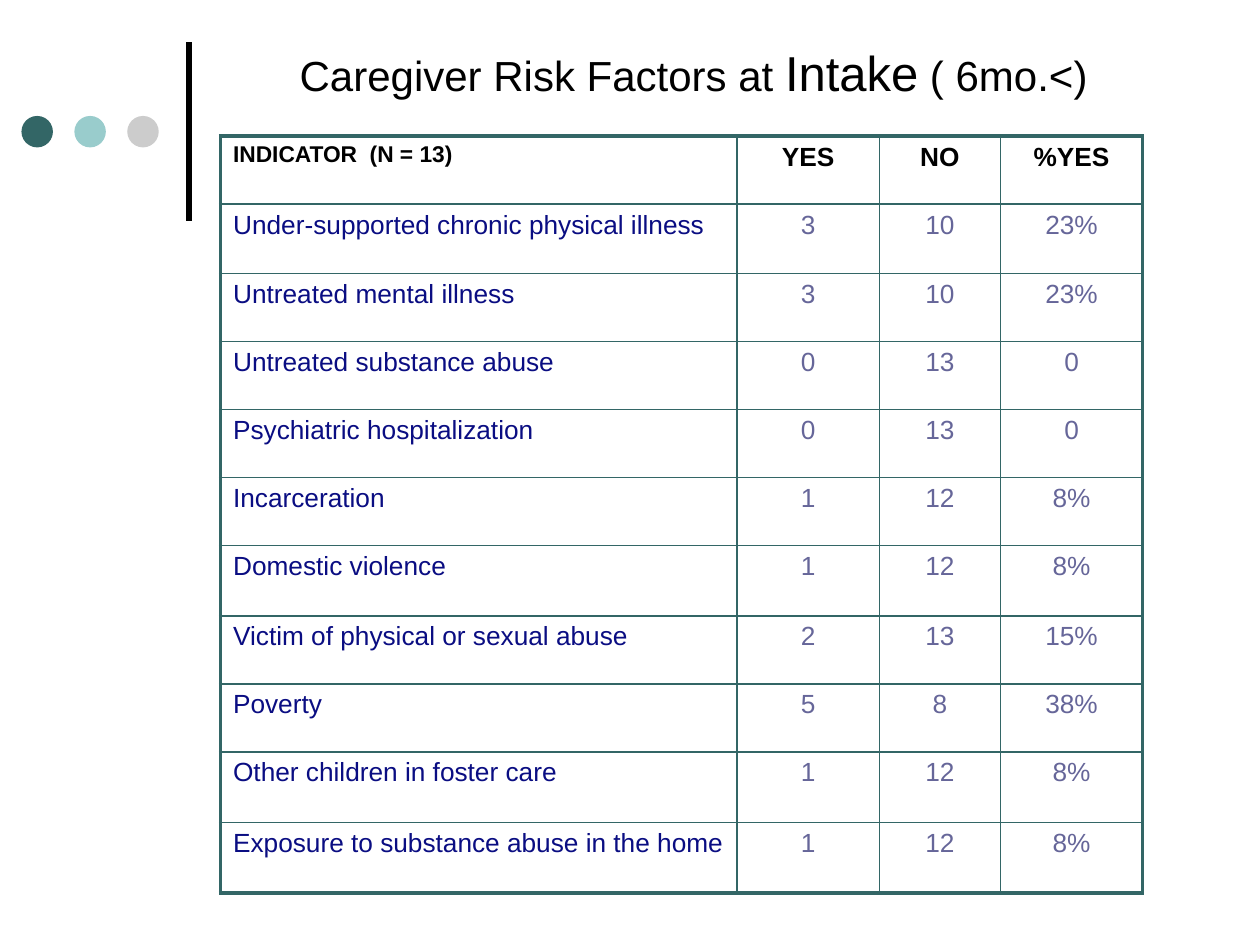
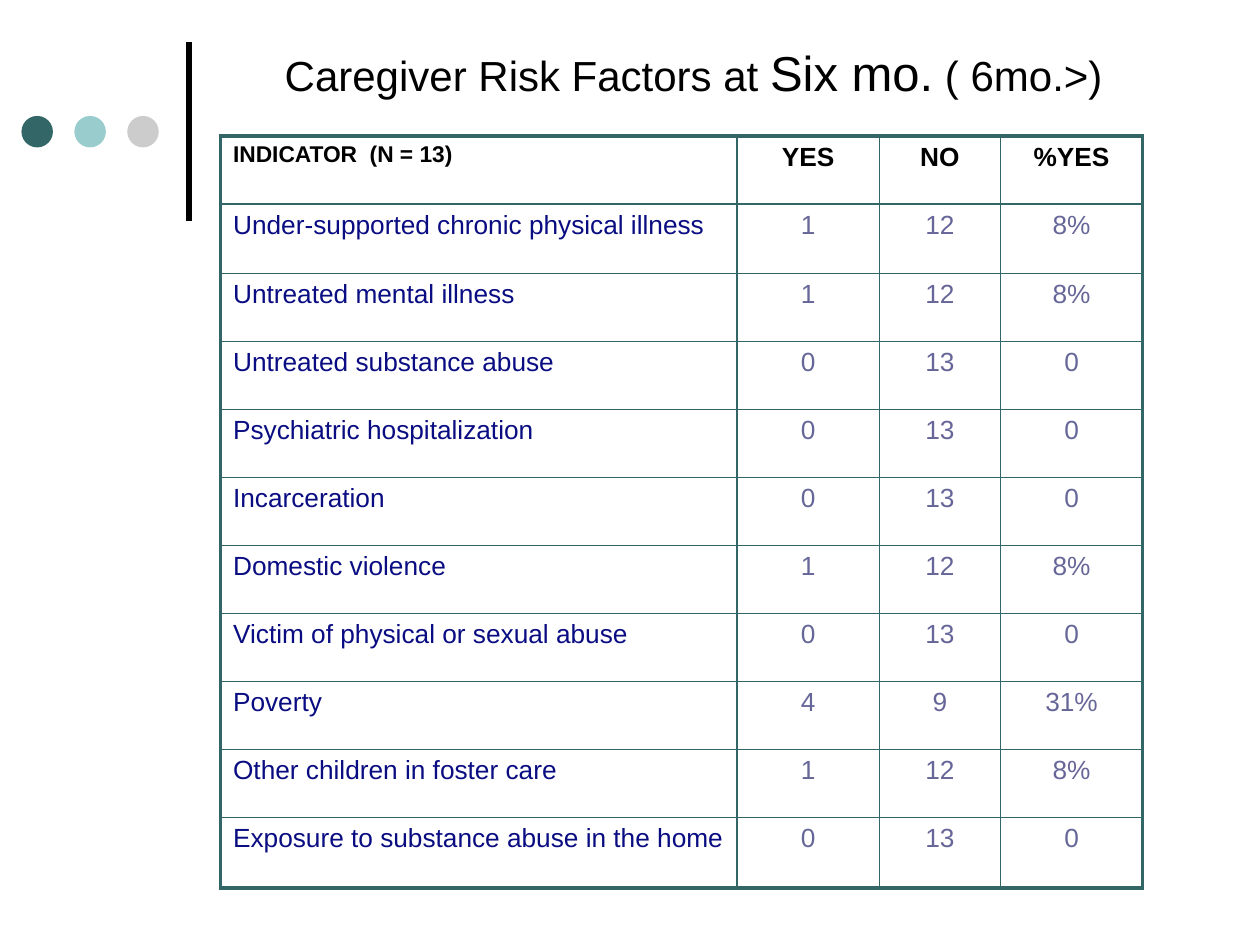
from dataclasses import dataclass

from lxml import etree
from pptx import Presentation
from pptx.dml.color import RGBColor
from pptx.enum.shapes import MSO_CONNECTOR, MSO_SHAPE
from pptx.enum.text import MSO_ANCHOR, PP_ALIGN
from pptx.oxml.ns import qn
from pptx.util import Inches, Pt

LINE, OVAL = MSO_CONNECTOR.STRAIGHT, MSO_SHAPE.OVAL
LEFT, CENTER = PP_ALIGN.LEFT, PP_ALIGN.CENTER
MIDDLE = MSO_ANCHOR.MIDDLE


@dataclass(frozen=True)
class Theme:
    font: str = "Arial"
    black: str = "000000"
    teal: str = "336666"
    aqua: str = "99CCCC"
    grey: str = "CCCCCC"
    navy: str = "0A0D82"
    violet: str = "666699"
    title: float = 24
    title_accent: float = 28
    label_head: float = 13
    body: float = 15
    rule: float = 3
    outer: float = 2.25
    inner: float = 1


T = Theme()

# Boxes: left, top, width, height
MARK_BOX = (0.17, 0.33, 1.33, 1.42)
TITLE_BOX = (1.67, 0.21, 7.67, 0.73)
TABLE_AT = (1.75, 1.08)
COL_WIDTHS = (4.1, 1.13, 0.96, 1.13)
ROW_HEIGHT = 0.54

HEADER = ("INDICATOR  (N = 13)", "YES", "NO", "%YES")
INDICATORS = (
    "Under-supported chronic physical illness",
    "Untreated mental illness",
    "Untreated substance abuse",
    "Psychiatric hospitalization",
    "Incarceration",
    "Domestic violence",
    "Victim of physical or sexual abuse",
    "Poverty",
    "Other children in foster care",
    "Exposure to substance abuse in the home",
)

# Title accent, title ending, (yes, no, %yes) by indicator, taller rows
SLIDES = (
    ("Intake", " ( 6mo.<)",
     ((3, 10, "23%"), (3, 10, "23%"), (0, 13, 0), (0, 13, 0), (1, 12, "8%"),
      (1, 12, "8%"), (2, 13, "15%"), (5, 8, "38%"), (1, 12, "8%"), (1, 12, "8%")),
     {1: 0.55, 6: 0.56, 9: 0.56, 10: 0.56}),
    ("Six mo.", " ( 6mo.>)",
     ((1, 12, "8%"), (1, 12, "8%"), (0, 13, 0), (0, 13, 0), (0, 13, 0),
      (1, 12, "8%"), (0, 13, 0), (4, 9, "31%"), (1, 12, "8%"), (0, 13, 0)),
     {1: 0.55, 10: 0.56}),
)


def style(font, size, color, bold=False):
    font.name, font.size, font.bold = T.font, Pt(size), bold
    font.color.rgb = RGBColor.from_string(color)


def add_mark(s, box):
    """Vertical rule with a row of dots to its left."""
    left, top, width, height = box
    x = Inches(left + width)
    rule = s.shapes.add_connector(LINE, x, Inches(top + height), x, Inches(top))
    rule.line.color.rgb = RGBColor.from_string(T.black)
    rule.line.width = Pt(T.rule)
    etree.SubElement(rule._element.spPr, qn("a:effectLst"))

    size, pitch = 0.25, 0.42
    for i, color in enumerate((T.teal, T.aqua, T.grey)):
        dot = s.shapes.add_shape(OVAL, Inches(left + i * pitch), Inches(top + 0.59),
                                 Inches(size), Inches(size))
        dot.shadow.inherit = False
        dot.fill.solid()
        dot.fill.fore_color.rgb = RGBColor.from_string(color)
        dot.line.fill.background()


def add_title(s, box, accent, ending):
    tf = s.shapes.add_textbox(*map(Inches, box)).text_frame
    tf.word_wrap = True
    tf.vertical_anchor = MIDDLE
    p = tf.paragraphs[0]
    p.alignment = CENTER
    for text, size in (("Caregiver Risk Factors at ", T.title),
                       (accent, T.title_accent), (ending, T.title)):
        r = p.add_run()
        r.text = text
        style(r.font, size, T.black)


def set_borders(cell, outer_sides):
    """Heavy lines on the table's edge, thin lines inside."""
    tc_pr = cell._tc.get_or_add_tcPr()
    for side in "LRTB":
        width = T.outer if side in outer_sides else T.inner
        ln = etree.SubElement(tc_pr, qn(f"a:ln{side}"), w=str(Pt(width)))
        fill = etree.SubElement(ln, qn("a:solidFill"))
        etree.SubElement(fill, qn("a:srgbClr"), val=T.teal)


def add_risk_table(s, at, values, tall_rows):
    rows = [HEADER] + [(name, *v) for name, v in zip(INDICATORS, values)]
    heights = [tall_rows.get(i, ROW_HEIGHT) for i in range(len(rows))]
    last_row, last_col = len(rows) - 1, len(HEADER) - 1
    table = s.shapes.add_table(len(rows), len(HEADER), *map(Inches, at),
                               Inches(sum(COL_WIDTHS)), Inches(sum(heights))).table
    table.first_row = table.horz_banding = False
    for column, width in zip(table.columns, COL_WIDTHS):
        column.width = Inches(width)
    for row, height in zip(table.rows, heights):
        row.height = Inches(height)

    for i, row in enumerate(rows):
        for j, value in enumerate(row):
            cell = table.cell(i, j)
            edges = (("L", j == 0), ("R", j == last_col),
                     ("T", i == 0), ("B", i == last_row))
            set_borders(cell, [side for side, on_edge in edges if on_edge])
            cell.fill.background()
            p = cell.text_frame.paragraphs[0]
            p.text = str(value)
            p.alignment = CENTER if j else LEFT
            if i == 0:
                size, color = (T.body if j else T.label_head), T.black
            else:
                size, color = T.body, (T.violet if j else T.navy)
            style(p.runs[0].font, size, color, bold=i == 0)


def add_risk_slide(prs, accent, ending, values, tall_rows):
    s = prs.slides.add_slide(prs.slide_layouts[6])
    add_mark(s, MARK_BOX)
    add_title(s, TITLE_BOX, accent, ending)
    add_risk_table(s, TABLE_AT, values, tall_rows)


def main():
    prs = Presentation()
    prs.slide_width, prs.slide_height = Inches(10), Inches(7.5)
    for content in SLIDES:
        add_risk_slide(prs, *content)
    prs.save("out.pptx")


if __name__ == "__main__":
    main()
